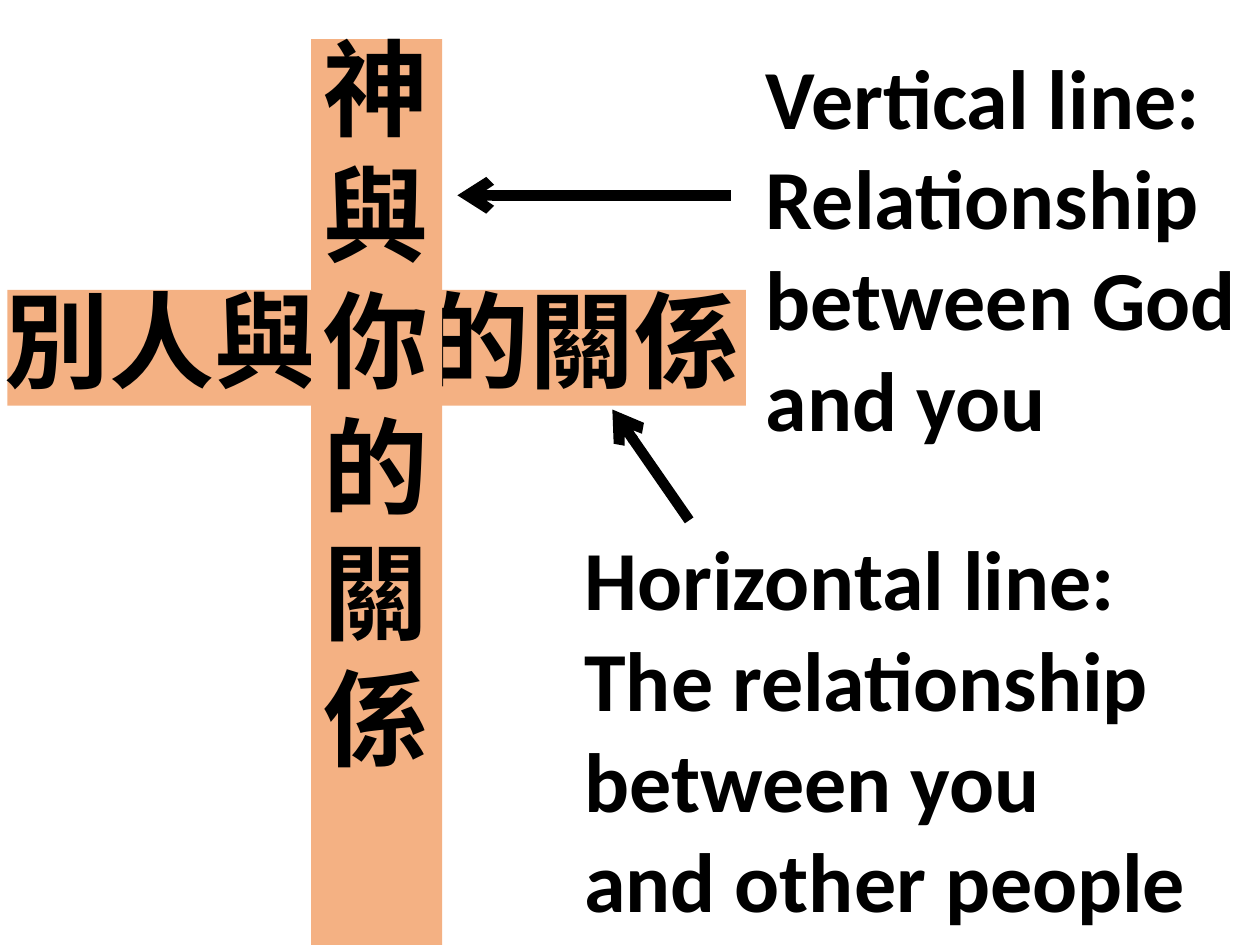
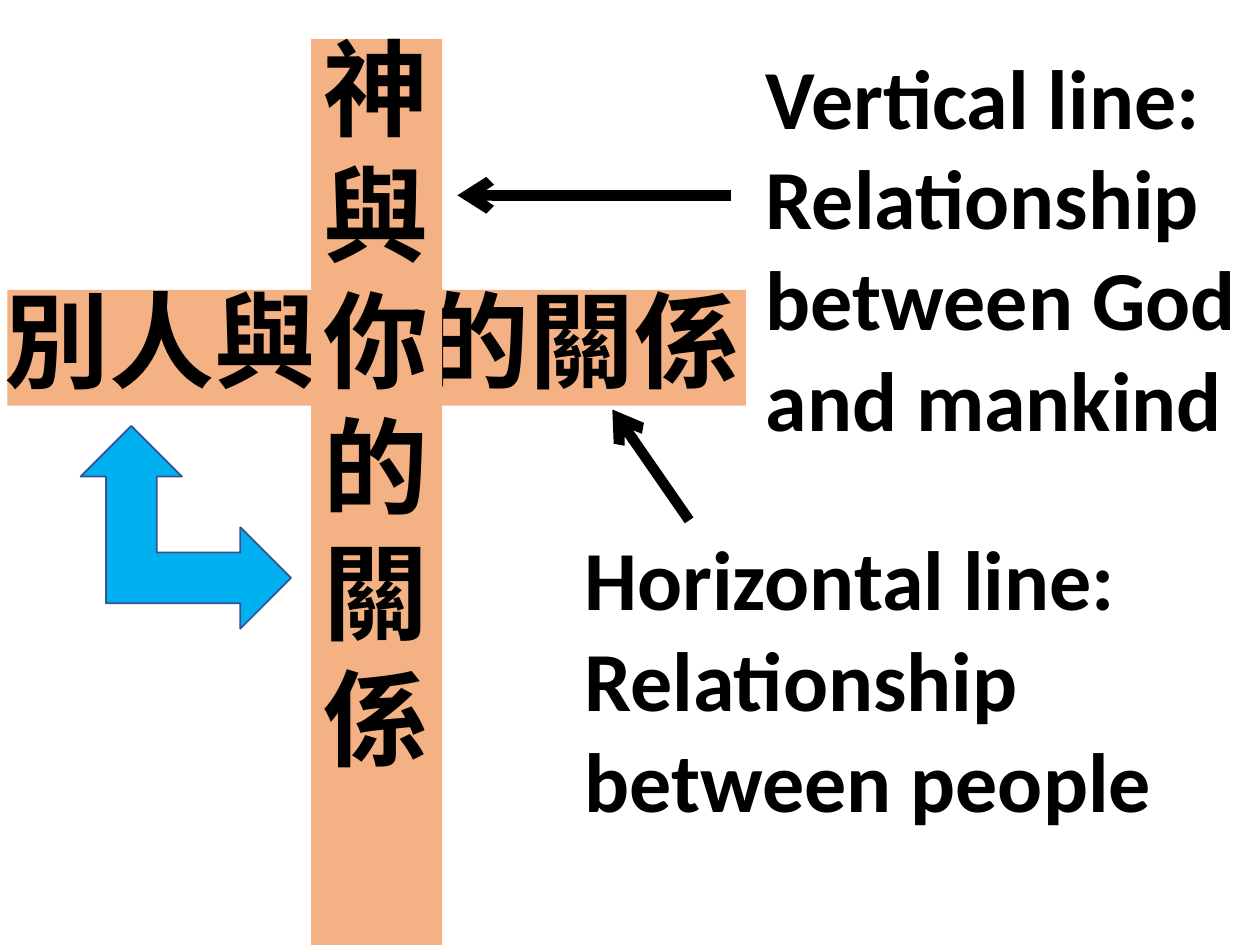
import dataclasses

import lxml.etree
import pptx
import pptx.dml.color
import pptx.enum.shapes
import pptx.enum.text
import pptx.oxml.ns
import pptx.util

EMU_PER_PX = 9144
WIDTH, HEIGHT = 1000, 750


@dataclasses.dataclass(frozen=True)
class Theme:
    """Colours, fonts and sizes shared by the slides."""
    text: str = "000000"
    beam: str = "F4B183"
    turn_fill: str = "00B0F0"
    turn_line: str = "325491"
    note_font: str = "Calibri"
    beam_font: str = "Roboto"
    note_size: int = 48
    beam_size: int = 60
    pointer_width: int = 6
    outline_width: int = 1


@dataclasses.dataclass(frozen=True)
class Box:
    """A rectangle in px."""
    left: int
    top: int
    width: int
    height: int

    def inner(self, left, top, width, height):
        """Return a box placed relative to this one."""
        return Box(self.left + left, self.top + top, width, height)

    def emu(self):
        """Return left, top, width and height in EMU."""
        return [px(length) for length in dataclasses.astuple(self)]


THEME = Theme()


def px(length):
    """Turn px into EMU."""
    return pptx.util.Emu(length * EMU_PER_PX)


def colour(value):
    """Turn a hex string into a colour."""
    return pptx.dml.color.RGBColor.from_string(value)


def add_text(shapes, box, lines, font_name, size, wrap=False):
    """Add bold text, one paragraph a line."""
    text_frame = shapes.add_textbox(*box.emu()).text_frame
    text_frame.word_wrap = wrap
    text_frame.auto_size = pptx.enum.text.MSO_AUTO_SIZE.SHAPE_TO_FIT_TEXT
    text_frame.text = "\n".join(lines)
    for paragraph in text_frame.paragraphs:
        for run in paragraph.runs:
            run.font.size = pptx.util.Pt(size)
            run.font.bold = True
            run.font.color.rgb = colour(THEME.text)
            run.font.name = font_name
            east_asian = lxml.etree.SubElement(
                run.font._element, pptx.oxml.ns.qn("a:ea"))
            east_asian.set("typeface", font_name)


def add_block(shapes, kind, box, fill, line=None):
    """Add a filled preset shape, outlined only if a line colour is given."""
    shape = shapes.add_shape(kind, *box.emu())
    shape.shadow.inherit = False
    shape.fill.solid()
    shape.fill.fore_color.rgb = colour(fill)
    if line:
        shape.line.color.rgb = colour(line)
        shape.line.width = pptx.util.Pt(THEME.outline_width)
    else:
        shape.line.fill.background()
    return shape


def add_pointer(shapes, box, start, end):
    """Add a thick arrow between two points of the box."""
    points = [px(length) for x, y in (start, end)
              for length in (box.left + x, box.top + y)]
    connector = shapes.add_connector(
        pptx.enum.shapes.MSO_CONNECTOR.STRAIGHT, *points)
    connector.line.color.rgb = colour(THEME.text)
    connector.line.width = pptx.util.Pt(THEME.pointer_width)
    arrowhead = lxml.etree.SubElement(
        connector.line._get_or_add_ln(), pptx.oxml.ns.qn("a:tailEnd"))
    arrowhead.set("type", "arrow")
    lxml.etree.SubElement(
        connector._element.spPr, pptx.oxml.ns.qn("a:effectLst"))


def add_cross(slide, box):
    """Add the cross with its two sentences and both pointers."""
    shapes = slide.shapes.add_group_shape().shapes
    beams = (
        (box.inner(0, 199, 586, 92), box.inner(-12, 183, 609, 111),
         ["別人與你的關係"]),
        (box.inner(241, 0, 104, 719), box.inner(241, -17, 104, 616),
         "神與你的關係"),
    )
    for beam_box, text_box, lines in beams:
        add_block(shapes, pptx.enum.shapes.MSO_SHAPE.RECTANGLE, beam_box,
                  THEME.beam)
        add_text(shapes, text_box, lines, THEME.beam_font, THEME.beam_size)
    add_pointer(shapes, box, (574, 124), (357, 124))
    add_pointer(shapes, box, (541, 382), (480, 294))


def add_turn_arrow(slide, box):
    """Add the arrow that joins the horizontal beam to the vertical one."""
    arrow = add_block(slide.shapes, pptx.enum.shapes.MSO_SHAPE.LEFT_UP_ARROW,
                      box, THEME.turn_fill, THEME.turn_line)
    arrow._element.spPr.xfrm.set("flipH", "1")


def add_cross_slide(presentation, box, vertical, horizontal,
                    horizontal_size, wrap=False, turn=False):
    """Add a slide with the cross and a note on each of its lines."""
    slide = presentation.slides.add_slide(presentation.slide_layouts[6])
    notes = (
        (box.inner(598, 31, 397, 333), ["Vertical line:", *vertical], False),
        (box.inner(454, 413, *horizontal_size),
         ["Horizontal line:", *horizontal], wrap),
    )
    for note_box, lines, note_wrap in notes:
        add_text(slide.shapes, note_box, lines, THEME.note_font,
                 THEME.note_size, note_wrap)
    add_cross(slide, box.inner(6, 31, 586, 719))
    if turn:
        add_turn_arrow(slide, box.inner(64, 338, 167, 161))


def main():
    """Build and save the presentation."""
    presentation = pptx.Presentation()
    presentation.slide_width = px(WIDTH)
    presentation.slide_height = px(HEIGHT)
    page = Box(0, 0, WIDTH, HEIGHT)
    add_cross_slide(presentation, page,
                    ["Relationship", "between God", "and you"],
                    ["The relationship", "between you and other people"],
                    (500, 333), wrap=True)
    add_cross_slide(presentation, page,
                    ["Relationship", "between God", "and mankind"],
                    ["Relationship", "between people"],
                    (474, 252), turn=True)
    presentation.save("out.pptx")


if __name__ == "__main__":
    main()
